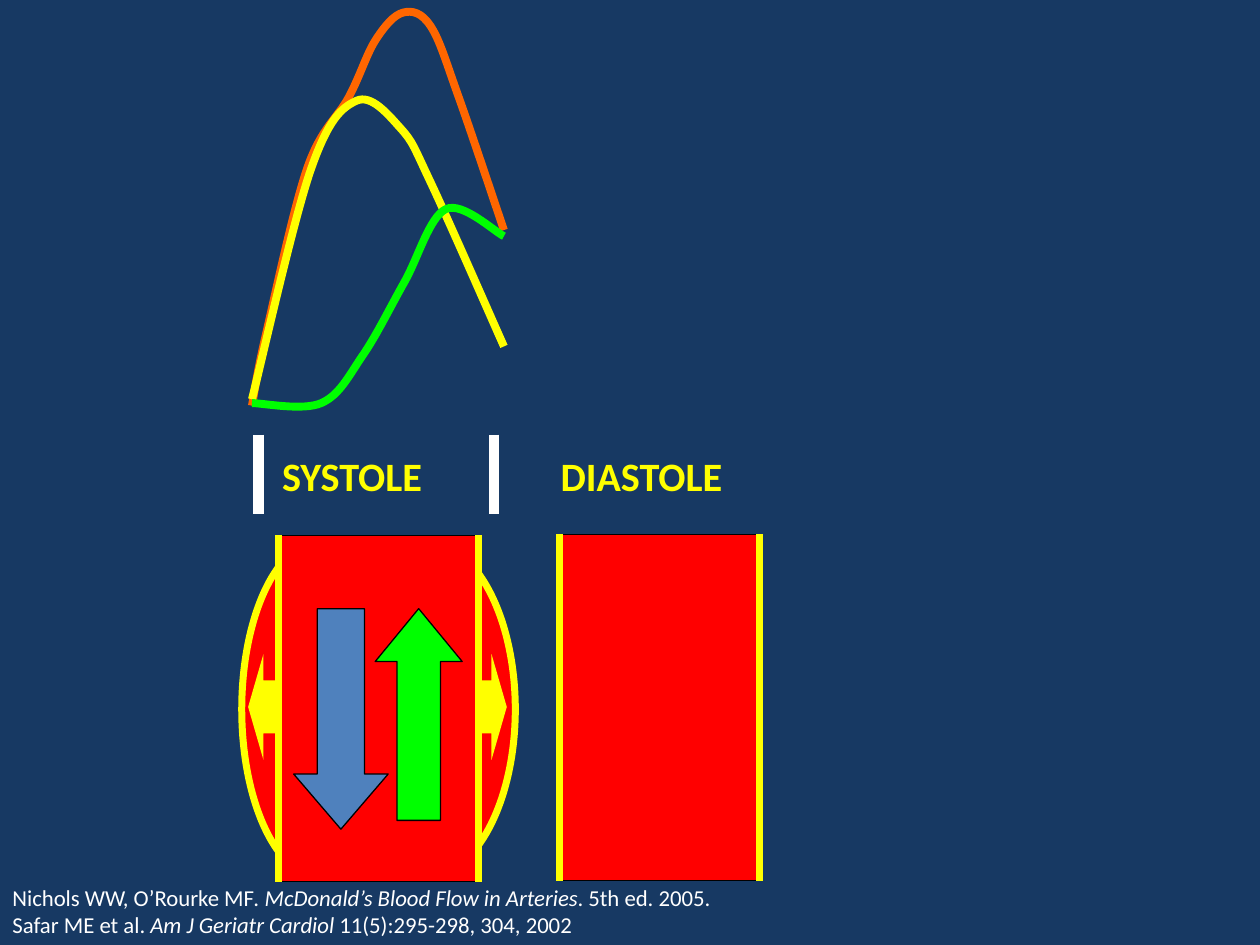
import pptx
import pptx.util
import pptx.dml.color
import pptx.enum.shapes
import pptx.enum.text
import pptx.oxml
import pptx.oxml.ns

Pt = pptx.util.Pt
qn = pptx.oxml.ns.qn
MSO = pptx.enum.shapes.MSO_SHAPE
STRAIGHT = pptx.enum.shapes.MSO_CONNECTOR.STRAIGHT
COLORS = {
    "navy": "173963", "white": "FFFFFF", "black": "000000", "yellow": "FFFF00",
    "orange": "FF6600", "green": "00FF00", "red": "FF0000", "blue": "4F81BD",
}
OUTLINE = ("black", 0.75)
WALL = ("yellow", 4)
TICK = ("white", 6)
WAVE_WIDTH = 4.5

WAVE_START, WAVE_END = 144, 288
PRESSURE_WAVES = {
    "orange": [(WAVE_START, 231.8), (151.9, 191.5), (175.7, 95.8), (199.4, 55.4),
               (214.6, 23), (230.4, 7.2), (246.2, 15.1), (262.1, 55.4),
               (WAVE_END, 131.5)],
    "yellow": [(WAVE_START, 228.2), (177.8, 96.5), (203.8, 57.6), (229, 73.4),
               (246.2, 104.4), (WAVE_END, 198)],
    "green": [(WAVE_START, 230.4), (183.6, 230.4), (207.4, 203), (231.1, 161.3),
              (254.9, 119.5), (WAVE_END, 135)],
}

VESSEL_WIDTH, VESSEL_HEIGHT = 114.3, 198
SYSTOLE_X, SYSTOLE_Y = 159.1, 305.8
DIASTOLE_X, DIASTOLE_Y = 319.5, 305.3
SYSTOLE_MIDDLE = SYSTOLE_Y + VESSEL_HEIGHT / 2
BULGE_HEIGHT = 193
PUSH_WIDTH, PUSH_HEIGHT = 35, 60.5
FLOW_TOP = 347.8

PHASE_TOP, PHASE_HEIGHT = 254.4, 34.6
PHASE_LABELS = [("SYSTOLE", 154.1, 121.7), ("DIASTOLE", 313.2, 131)]
TICK_XS, TICK_TOP, TICK_BOTTOM = (147.6, 282.2), 248.4, 293.8

PHASE_FONT = {"name": "Calibri", "size": Pt(23), "bold": True}
CITATION_FONT = {"name": "Calibri", "size": Pt(13)}
CITATIONS = [
    [("Nichols WW, O’Rourke MF", False),
     (". McDonald’s Blood Flow in Arteries", True),
     (". 5th ed. 2005.", False)],
    [("Safar ME et al. ", False), ("Am J Geriatr Cardiol", True),
     (" 11(5):295-298, 304, 2002", False)],
]


def rgb(name):
    return pptx.dml.color.RGBColor.from_string(COLORS[name])


def set_line(line, color, width):
    line.color.rgb = rgb(color)
    line.width = Pt(width)


def add_shape(shapes, kind, box, fill, line=None, flip=None, adj=()):
    sp = shapes.add_shape(kind, *map(Pt, box))
    sp.shadow.inherit = False
    sp.fill.solid()
    sp.fill.fore_color.rgb = rgb(fill)
    if line:
        set_line(sp.line, *line)
    else:
        sp.line.fill.background()
    if flip:
        sp._element.spPr.get_or_add_xfrm().set(flip, "1")
    for i, value in enumerate(adj):
        sp.adjustments[i] = value


def add_vertical(shapes, x, top, bottom, line):
    cxn = shapes.add_connector(STRAIGHT, Pt(x), Pt(top), Pt(x), Pt(bottom))
    set_line(cxn.line, *line)
    cxn._element.spPr.append(pptx.oxml.parse_xml(
        "<a:effectLst %s/>" % pptx.oxml.ns.nsdecls("a")))


def smooth_points(knots):
    padded = [knots[0], *knots, knots[-1]]
    points = []
    for before, start, end, after in zip(padded, padded[1:], padded[2:], padded[3:]):
        leave = [s + (e - b) / 6 for b, s, e in zip(before, start, end)]
        arrive = [e - (a - s) / 6 for s, e, a in zip(start, end, after)]
        points += [leave, arrive, end]
    return points


def add_wave(shapes, knots, color):
    points = [(Pt(x), Pt(y)) for x, y in smooth_points(knots)]
    builder = shapes.build_freeform(*map(Pt, knots[0]), scale=1.0)
    builder.add_line_segments(points, close=False)
    sp = builder.convert_to_shape()
    sp.shadow.inherit = False
    sp.fill.background()
    set_line(sp.line, color, WAVE_WIDTH)
    segments = list(sp._element.iter(qn("a:lnTo")))
    for i in range(0, len(segments), 3):
        bezier = segments[i].makeelement(qn("a:cubicBezTo"), {})
        segments[i].addprevious(bezier)
        for segment in segments[i:i + 3]:
            bezier.append(segment[0])
            segment.getparent().remove(segment)


def add_text(shapes, box, paragraphs, font, color, hanging=0):
    tf = shapes.add_textbox(*map(Pt, box)).text_frame
    tf.word_wrap = False
    tf.auto_size = pptx.enum.text.MSO_AUTO_SIZE.SHAPE_TO_FIT_TEXT
    for i, runs in enumerate(paragraphs):
        p = tf.add_paragraph() if i else tf.paragraphs[0]
        if hanging:
            pPr = p._p.get_or_add_pPr()
            pPr.set("marL", str(Pt(hanging)))
            pPr.set("indent", str(-Pt(hanging)))
        for text, italic in runs:
            r = p.add_run()
            r.text = text
            for key, value in {**font, "italic": italic}.items():
                setattr(r.font, key, value)
            r.font.color.rgb = rgb(color)


def add_phase_labels(shapes):
    ticks = shapes.add_group_shape().shapes
    for x in TICK_XS:
        add_vertical(ticks, x, TICK_TOP, TICK_BOTTOM, TICK)
    for text, x, width in PHASE_LABELS:
        add_text(shapes, (x, PHASE_TOP, width, PHASE_HEIGHT),
                 [[(text, False)]], PHASE_FONT, "yellow")


def add_vessel(shapes, x, y):
    group = shapes.add_group_shape().shapes
    add_shape(group, MSO.RECTANGLE, (x, y, VESSEL_WIDTH, VESSEL_HEIGHT), "red", OUTLINE)
    for wall_x in (x, x + VESSEL_WIDTH):
        add_vertical(group, wall_x, y, y + VESSEL_HEIGHT, WALL)


def add_distension(shapes):
    group = shapes.add_group_shape().shapes
    bulge_top = SYSTOLE_MIDDLE - BULGE_HEIGHT / 2 + 0.5
    push_top = SYSTOLE_MIDDLE - PUSH_HEIGHT / 2 - 0.8
    for x, width, flip in ((190.8, 103.7, None), (138.2, 91.4, "flipH")):
        add_shape(group, MSO.FLOWCHART_DELAY, (x, bulge_top, width, BULGE_HEIGHT),
                  "red", WALL, flip)
    for x, flip in ((141.8, None), (254.6, "flipH")):
        add_shape(group, MSO.LEFT_ARROW, (x, push_top, PUSH_WIDTH, PUSH_HEIGHT),
                  "yellow", flip=flip, adj=(0.5, 0.25))


def add_flow_arrows(shapes):
    for x, width, height, color, flip, head in (
            (167.8, 54, 126, "blue", None, 0.583),
            (214.4, 49.7, 121, "green", "flipV", 0.608)):
        add_shape(shapes, MSO.DOWN_ARROW, (x, FLOW_TOP, width, height),
                  color, OUTLINE, flip, (0.5, head))


def main():
    prs = pptx.Presentation()
    prs.slide_width, prs.slide_height = Pt(720), Pt(540)
    s = prs.slides.add_slide(prs.slide_layouts[6])
    s.background.fill.solid()
    s.background.fill.fore_color.rgb = rgb("navy")

    for color, knots in PRESSURE_WAVES.items():
        add_wave(s.shapes, knots, color)
    add_phase_labels(s.shapes)
    add_vessel(s.shapes, DIASTOLE_X, DIASTOLE_Y)
    add_distension(s.shapes)
    add_vessel(s.shapes, SYSTOLE_X, SYSTOLE_Y)
    add_flow_arrows(s.shapes)
    add_text(s.shapes, (0, 501.4, 419, 38.9), CITATIONS, CITATION_FONT, "white", 27)
    prs.save("out.pptx")


if __name__ == "__main__":
    main()
